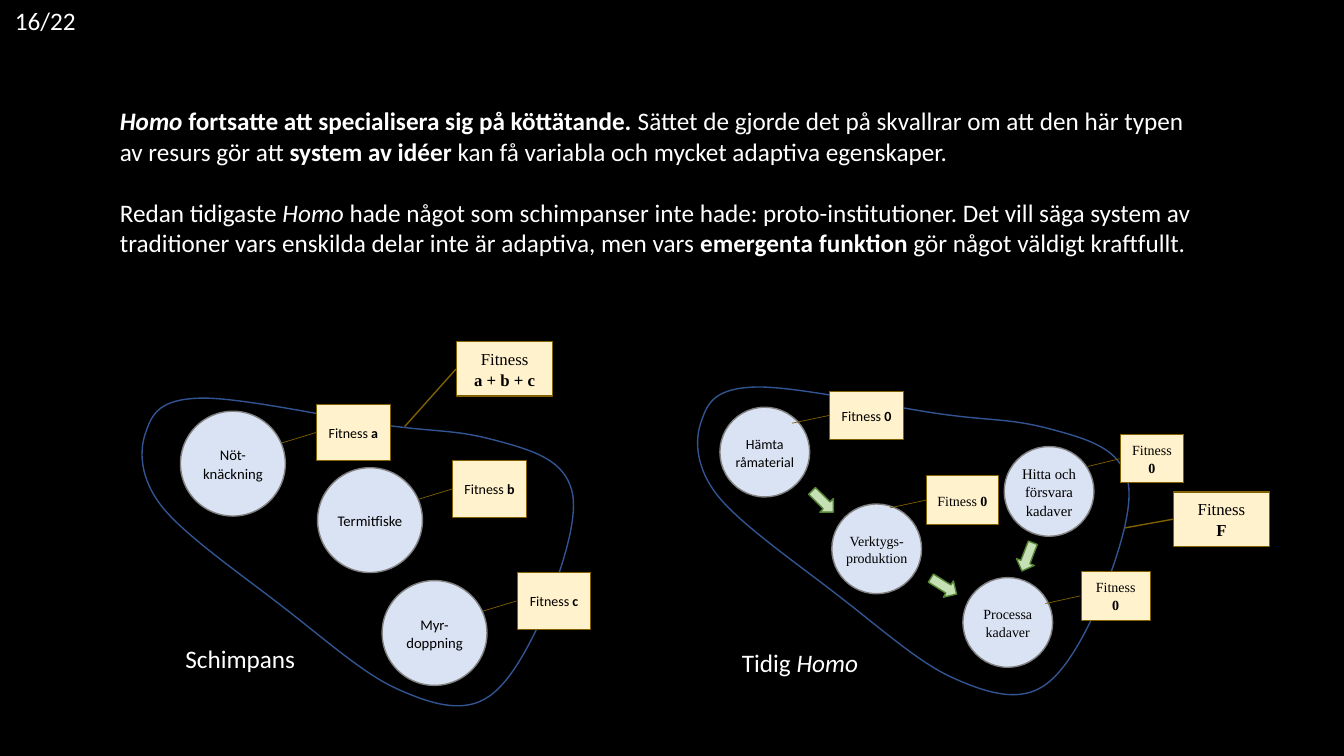
from lxml import etree
from pptx import Presentation
from pptx.dml.color import RGBColor
from pptx.enum.shapes import MSO_SHAPE
from pptx.enum.text import MSO_ANCHOR, MSO_AUTO_SIZE, PP_ALIGN
from pptx.oxml.ns import qn
from pptx.util import Inches, Pt

OVAL, ARROW, CALLOUT = MSO_SHAPE.OVAL, MSO_SHAPE.RIGHT_ARROW, MSO_SHAPE.LINE_CALLOUT_1
MIDDLE, CENTER, LEFT = MSO_ANCHOR.MIDDLE, PP_ALIGN.CENTER, PP_ALIGN.LEFT
GROW = MSO_AUTO_SIZE.SHAPE_TO_FIT_TEXT
SANS, SERIF = "Calibri", "Times New Roman"
BLACK, WHITE = "000000", "FFFFFF"


def paint(shape, fill, line, weight):
    shape.shadow.inherit = False
    if fill:
        shape.fill.solid()
        shape.fill.fore_color.rgb = RGBColor.from_string(fill)
    else:
        shape.fill.background()
    shape.line.color.rgb = RGBColor.from_string(line)
    shape.line.width = Pt(weight)


def write(shape, paragraphs, size=18, font=SANS, color=WHITE, align=LEFT,
          line_spacing=None, before=0, after=0):
    """Each paragraph is a list of (text, style); style may hold b and i."""
    frame = shape.text_frame
    frame.word_wrap = True
    for index, runs in enumerate(paragraphs):
        para = frame.add_paragraph() if index else frame.paragraphs[0]
        para.alignment = align
        para.line_spacing = line_spacing
        para.space_before = Pt(before if index else 0)
        para.space_after = Pt(after)
        for text, style in runs:
            span = para.add_run()
            span.text = text
            span.font.size = Pt(size)
            span.font.name = font
            span.font.bold = "b" in style
            span.font.italic = "i" in style
            span.font.color.rgb = RGBColor.from_string(color)


deck = Presentation()
deck.slide_width, deck.slide_height = Inches(13.33), Inches(7.5)
page = deck.slides.add_slide(deck.slide_layouts[6])
page.background.fill.solid()
page.background.fill.fore_color.rgb = RGBColor.from_string(BLACK)

# Body text, system names and page number
body = [
    [("Homo", "bi"), (" fortsatte att specialisera sig på köttätande.", "b"),
     (" Sättet de gjorde det på skvallrar om att den här typen av resurs gör att ", ""),
     ("system av idéer", "b"),
     (" kan få variabla och mycket adaptiva egenskaper.", "")],
    [("Redan tidigaste ", ""), ("Homo", "i"),
     (" hade något som schimpanser inte hade: proto-institutioner. Det vill säga system av "
      "traditioner vars enskilda delar inte är adaptiva, men vars ", ""),
     ("emergenta funktion", "b"), (" gör något väldigt kraftfullt.", "")],
]
text_boxes = [
    (1.09, 1, 11.02, 1.62, body),
    (1.74, 6.33, 1.54, 0.4, [[("Schimpans", "")]]),
    (7.26, 6.37, 1.54, 0.4, [[("Tidig ", ""), ("Homo", "i")]]),
    (0.05, 0, 0.81, 0.4, [[("16/22", "")]]),
]
for left, top, width, height, paragraphs in text_boxes:
    box = page.shapes.add_textbox(Inches(left), Inches(top), Inches(width), Inches(height))
    write(box, paragraphs, before=22)
    box.text_frame.auto_size = GROW

# Curved system outlines: a start, then three points for each Bézier curve
outline = [
    (6.96, 4.17),
    (7.02, 3.99), (7.1, 3.85), (7.5, 3.84),
    (7.9, 3.83), (8.84, 4.04), (9.35, 4.11),
    (9.86, 4.18), (10.02, 4.15), (10.43, 4.26),
    (10.85, 4.37), (11.1, 4.47), (11.18, 4.75),
    (11.26, 5.03), (11.06, 5.59), (10.92, 5.94),
    (10.77, 6.28), (10.56, 6.7), (10.31, 6.83),
    (10.07, 6.96), (9.77, 6.87), (9.44, 6.72),
    (9.11, 6.57), (8.73, 6.23), (8.34, 5.93),
    (7.96, 5.63), (7.35, 5.21), (7.12, 4.92),
    (6.89, 4.63), (6.89, 4.35), (6.96, 4.17),
]
for shift_x, shift_y in [(-5.51, 0.11), (0, 0)]:
    points = [(Inches(x + shift_x), Inches(y + shift_y)) for x, y in outline]
    builder = page.shapes.build_freeform(*points[0])
    builder.add_line_segments(points[1:], close=True)
    loop = builder.convert_to_shape()
    paint(loop, None, "325491", 1)
    # Turn every three straight segments into one curve
    segments = list(loop._element.iter(qn("a:lnTo")))
    for start in range(0, len(segments), 3):
        curve = etree.Element(qn("a:cubicBezTo"))
        segments[start].addprevious(curve)
        for segment in segments[start:start + 3]:
            curve.append(segment[0])
            segment.getparent().remove(segment)

# Activities
activities = [
    (1.79, 4.08, 1.04, "Nöt-knäckning", 10.5, SANS),
    (3.15, 4.64, 1.04, "Termitfiske", 10.5, SANS),
    (3.79, 5.76, 1.04, "Myr-doppning", 10.5, SANS),
    (7.14, 4.04, 0.89, "Hämta råmaterial", 10, SANS),
    (8.25, 5, 0.89, "Verktygs-produktion", 10, SERIF),
    (9.96, 4.43, 0.89, "Hitta och försvara kadaver", 10.5, SERIF),
    (9.55, 5.73, 0.89, "Processa kadaver", 10, SERIF),
]
for left, top, diameter, label, size, font in activities:
    circle = page.shapes.add_shape(OVAL, Inches(left), Inches(top),
                                   Inches(diameter), Inches(diameter))
    paint(circle, "DAE3F3", "808080", 1)
    write(circle, [[(label, "")]], size=size, font=font, color=BLACK, align=CENTER,
          line_spacing=1.06, after=8)
    frame = circle.text_frame
    frame.vertical_anchor = MIDDLE
    frame.margin_left = frame.margin_right = frame.margin_top = frame.margin_bottom = 0

# Arrows between activities
for left, top, angle in [(8.01, 4.88, 44.8), (9.21, 5.72, 31.8), (10.04, 5.43, 111)]:
    arrow = page.shapes.add_shape(ARROW, Inches(left), Inches(top), Inches(0.3), Inches(0.19))
    arrow.rotation = angle
    paint(arrow, "C5E0B4", "548235", 1)

# Fitness callouts: the tip is (down, across) as shares of the box
ape_tip, homo_tip, total_tip = (0.686, -0.467), (0.663, -0.511), (1.558, -0.543)
part = {"size": 10, "line_spacing": 1.06, "after": 8}
total = {"size": 12, "line_spacing": 1.05}
callouts = [
    (3.14, 4.01, 0.73, 0.56, ape_tip, "a", SANS, part),
    (4.49, 4.57, 0.73, 0.56, ape_tip, "b", SANS, part),
    (5.13, 5.68, 0.73, 0.56, ape_tip, "c", SANS, part),
    (4.53, 3.39, 0.95, 0.54, total_tip, "a + b + c", SERIF, total),
    (8.23, 3.88, 0.73, 0.48, homo_tip, "0", SANS, part),
    (9.19, 4.72, 0.71, 0.48, homo_tip, "0", SERIF, part),
    (11.11, 4.31, 0.63, 0.48, homo_tip, "0", SERIF, part),
    (10.72, 5.67, 0.69, 0.48, homo_tip, "0", SERIF, part),
    (11.64, 4.88, 0.95, 0.54, homo_tip, "F", SERIF, total),
]
for left, top, width, height, tip, value, font, style in callouts:
    callout = page.shapes.add_shape(CALLOUT, Inches(left), Inches(top),
                                    Inches(width), Inches(height))
    for index, share in enumerate((0.503, -0.008) + tip):
        callout.adjustments[index] = share
    paint(callout, "FFF2CC", "806000", 1 if style is total else 0.5)
    if style is total:
        paragraphs = [[("Fitness", "")], [(value, "b")]]
    else:
        paragraphs = [[("Fitness ", ""), (value, "b")]]
    write(callout, paragraphs, font=font, color=BLACK, align=CENTER, **style)
    callout.text_frame.vertical_anchor = MIDDLE

deck.save("out.pptx")
